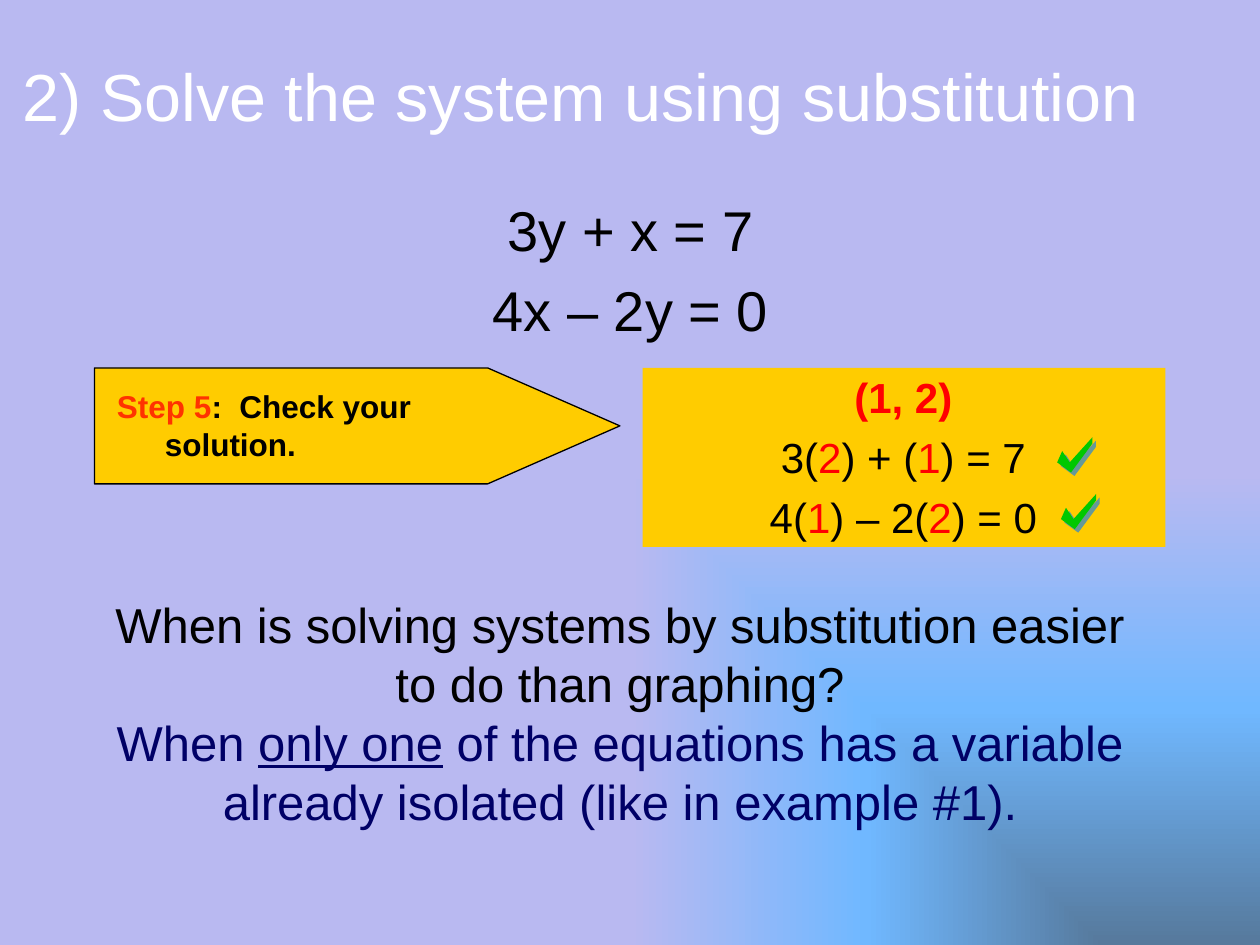
from lxml import etree
from pptx import Presentation
from pptx.dml.color import RGBColor
from pptx.enum.shapes import MSO_SHAPE
from pptx.enum.text import MSO_ANCHOR, PP_ALIGN
from pptx.oxml import parse_xml
from pptx.oxml.ns import nsdecls, qn
from pptx.util import Inches, Pt

WHITE = RGBColor(0xFF, 0xFF, 0xFF)
BLACK = RGBColor(0, 0, 0)
RED = RGBColor(0xFF, 0, 0)
ORANGE = RGBColor(0xFF, 0x33, 0)
NAVY = RGBColor(0, 0, 0x66)
GOLD = RGBColor(0xFF, 0xCC, 0)
GREEN = RGBColor(0, 0xC8, 0)
SHADOW = RGBColor(0x66, 0x99, 0x99)
GRADIENT = [(0, "56799C"), (50, "70B8FF"), (100, "B9B9F1")]

INDENT = 0.38
SPACING = 0.23  # space before a paragraph, as a share of the font size
CENTER, LEFT = PP_ALIGN.CENTER, PP_ALIGN.LEFT
TOP, MIDDLE = MSO_ANCHOR.TOP, MSO_ANCHOR.MIDDLE

# A run is (text, colour, style), where style holds "b" for bold, "u" for underline.
TITLE = [[("2) Solve the system using substitution", WHITE, "")]]
SYSTEM = [[("3y + x = 7", BLACK, "")], [("4x – 2y = 0", BLACK, "")]]
STEP = [[("Step 5", ORANGE, "b"), (":  Check your solution.", BLACK, "b")]]
CHECK = [
    [("(1, 2)", RED, "b")],
    [("3(", BLACK, ""), ("2", RED, ""), (") + (", BLACK, ""),
     ("1", RED, ""), (") = 7", BLACK, "")],
    [("4(", BLACK, ""), ("1", RED, ""), (") – 2(", BLACK, ""),
     ("2", RED, ""), (") = 0", BLACK, "")],
]
QUESTION = [
    [("When is solving systems by substitution easier to do than graphing?", BLACK, "")],
    [("When ", NAVY, ""), ("only one", NAVY, "u"),
     (" of the equations has a variable already isolated (like in example #1).", NAVY, "")],
]

# paragraphs, box, size, alignment, anchor, hanging indent, spaced paragraphs
TEXTS = [
    (TITLE, (0.08, 0.25, 9.08, 1), 38, LEFT, MIDDLE, False, False),
    (SYSTEM, (0.67, 1.5, 8.67, 5.08), 32, CENTER, TOP, True, True),
    (STEP, (0.83, 3, 3.58, 0.75), 18, LEFT, MIDDLE, True, False),
    (CHECK, (5.17, 3, 4, 1.25), 24, CENTER, MIDDLE, True, True),
    (QUESTION, (0.67, 4.67, 8.5, 1.97), 28, CENTER, TOP, False, False),
]

TICK = [(0.04, 0.11), (0, 0.2), (0.11, 0.28), (0.28, 0.05), (0.28, 0), (0.1, 0.2)]
TICK_ORIGINS = [(8.39, 3.47), (8.42, 3.92)]


def set_background(slide):
    """Gradient that spreads from the bottom right corner."""
    stops = "".join(f'<a:gs pos="{pos * 1000}"><a:srgbClr val="{color}"/></a:gs>'
                    for pos, color in GRADIENT)
    slide.background.fill.solid()
    bg_pr = slide.background._cSld.bg.bgPr
    bg_pr.replace(bg_pr[0], parse_xml(
        f'<a:gradFill {nsdecls("a")} rotWithShape="0"><a:gsLst>{stops}</a:gsLst>'
        '<a:path path="rect"><a:fillToRect l="100000" t="100000"/></a:path></a:gradFill>'))


def style_shape(s, fill, outlined=False):
    s.shadow.inherit = False
    s.fill.solid()
    s.fill.fore_color.rgb = fill
    if outlined:
        s.line.color.rgb = BLACK
        s.line.width = Pt(0.75)
    else:
        s.line.fill.background()


def add_panel(slide, kind, box, outlined=False):
    s = slide.shapes.add_shape(kind, *map(Inches, box))
    style_shape(s, GOLD, outlined)
    return s


def add_text(slide, paragraphs, box, size, align, anchor, hanging, spaced):
    tf = slide.shapes.add_textbox(*map(Inches, box)).text_frame
    tf.word_wrap = True
    tf.vertical_anchor = anchor
    for i, runs in enumerate(paragraphs):
        p = tf.paragraphs[0] if i == 0 else tf.add_paragraph()
        p.alignment = align
        if spaced:
            p.space_before = Pt(SPACING * size)
        if hanging:
            p_pr = p._p.get_or_add_pPr()
            p_pr.set("marL", str(Inches(INDENT)))
            p_pr.set("indent", str(-Inches(INDENT)))
        for text, color, style in runs:
            r = p.add_run()
            r.text = text
            r.font.name = "Arial"
            r.font.size = Pt(size)
            r.font.color.rgb = color
            r.font.bold = "b" in style
            r.font.underline = "u" in style


def add_tick(slide, left, top):
    points = [(Inches(left + x), Inches(top + y)) for x, y in TICK]
    builder = slide.shapes.build_freeform(*points[0])
    builder.add_line_segments(points[1:], close=True)
    s = builder.convert_to_shape()
    style_shape(s, GREEN)
    effects = s._element.spPr.find(qn("a:effectLst"))
    shadow = etree.SubElement(effects, qn("a:outerShdw"), dist=str(Pt(2.8)),
                              dir=str(45 * 60000), algn="ctr", rotWithShape="0")
    etree.SubElement(shadow, qn("a:srgbClr"), val=str(SHADOW))


def main():
    prs = Presentation()
    prs.slide_width, prs.slide_height = Inches(10), Inches(7.5)
    slide = prs.slides.add_slide(prs.slide_layouts[6])
    set_background(slide)
    arrow = add_panel(slide, MSO_SHAPE.PENTAGON, (0.75, 2.92, 4.17, 0.92), outlined=True)
    arrow.adjustments[0] = 1.14
    add_panel(slide, MSO_SHAPE.RECTANGLE, (5.1, 2.92, 4.15, 1.42))
    for text in TEXTS:
        add_text(slide, *text)
    for origin in TICK_ORIGINS:
        add_tick(slide, *origin)
    prs.save("out.pptx")


if __name__ == "__main__":
    main()
